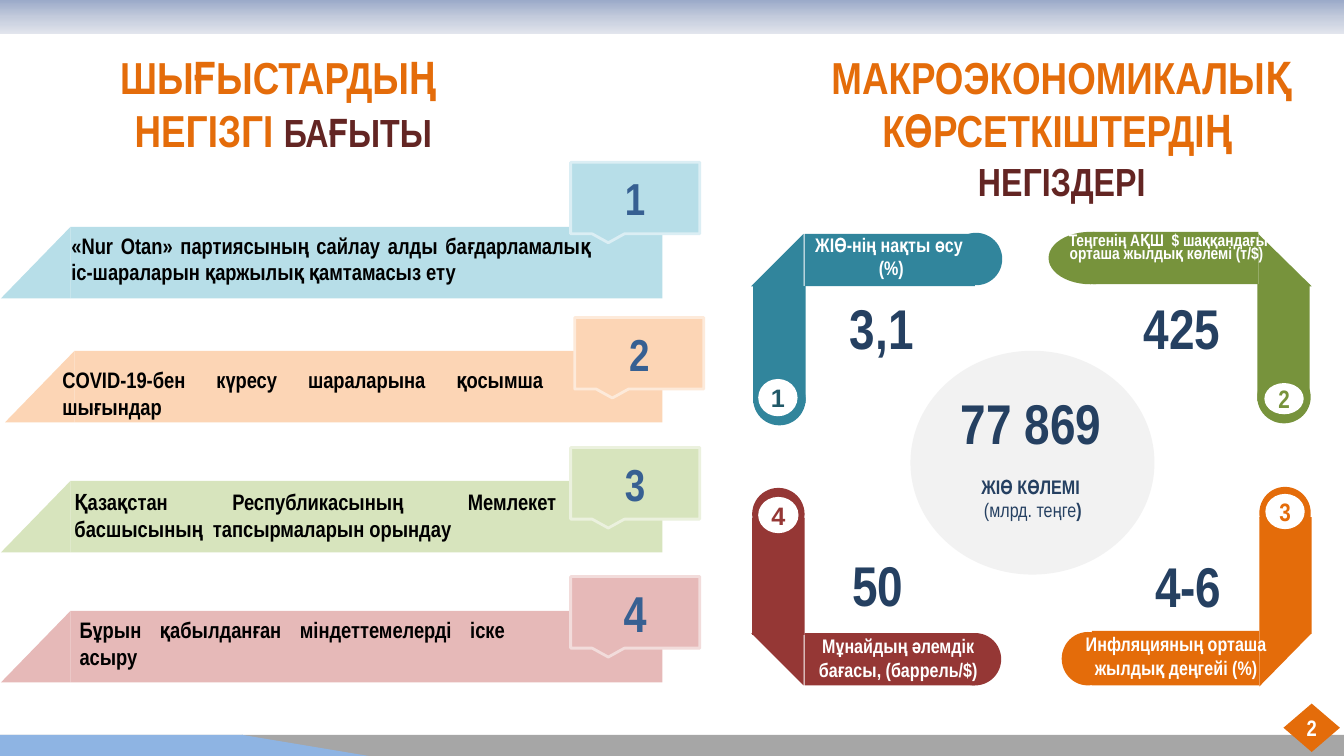
from copy import deepcopy
from dataclasses import dataclass
from pptx import Presentation
from pptx.dml.color import RGBColor
from pptx.enum.shapes import MSO_SHAPE as Kind
from pptx.enum.text import MSO_ANCHOR as Anchor, MSO_AUTO_SIZE as Fit, PP_ALIGN as Align
from pptx.oxml.ns import qn
from pptx.util import Pt


@dataclass(frozen=True)
class Theme:
    font: str = "Arial Narrow"
    plain: str = "Arial"
    orange: str = "E46C0A"
    maroon: str = "632523"
    navy: str = "254061"
    blue: str = "376092"
    sky: str = "8EB4E3"
    gray: str = "A6A6A6"
    pale: str = "F2F2F2"
    white: str = "FFFFFF"
    black: str = "000000"
    head: int = 32
    sub: int = 28
    value: int = 40
    body: int = 16
    label: int = 14
    small: int = 12
    badge: int = 18


T = Theme()
PX = 9144  # 100 px to the inch

# Content: lengths in px
BAND = [(0, "9BAAC9"), (0.5, "C3CBDC"), (1, "E2E5ED")]
LEFT = ["ШЫҒЫСТАРДЫҢ ", [("НЕГІЗГІ ", T.head, T.orange), ("БАҒЫТЫ", T.sub, T.maroon)]]
RIGHT = [[("МАКРОЭКОНОМИКАЛЫҚ КӨРСЕТКІШТЕРДІҢ", T.head, T.orange), (" ", T.sub, T.maroon)],
         [("НЕГІЗДЕРІ", T.sub, T.maroon)]]

# left, top, rise of tag, fill, edge, digit size, text box, text
ROWS = [
    (1, 225, 64, "B7DEE8", "DBEEF4", 32, (61, 225, 535, 64),
     "«Nur Otan» партиясының сайлау алды бағдарламалық іс-шараларын қаржылық қамтамасыз ету"),
    (5, 348, 33, "FCD5B5", "FDEADA", 32, (52, 358, 497, 64),
     "COVID-19-бен күресу шараларына қосымша шығындар"),
    (1, 477, 33, "D7E4BD", "EBF1DE", 32, (64, 479, 498, 64),
     "Қазақстан Республикасының Мемлекет басшысының  тапсырмаларын орындау"),
    (1, 606, 34, "E6B9B8", "F2DCDB", 36, (69, 606, 442, 64),
     "Бұрын қабылданған міндеттемелерді іске асыру"),
]

# fill, post, post end, arm, arm end, corner, flip, turn
HOOKS = [
    ("31859C", (747, 284, 52, 116), (747, 370, 52, 52), (798, 232, 169, 52),
     (942, 231, 52, 52), (745, 232, 52, 52), True, 0),
    ("77933C", (1247, 282, 52, 116), (1247, 368, 53, 52), (1084, 230, 164, 52),
     (1040, 230, 83, 52), (1248, 232, 53, 52), False, 0),
    ("953735", (746, 514, 52, 116), (746, 484, 52, 52), (798, 628, 169, 52),
     (941, 628, 52, 52), (745, 628, 52, 52), False, 180),
    (T.orange, (1249, 513, 52, 116), (1249, 483, 51, 52), (1083, 626, 166, 54),
     (1053, 627, 52, 53), (1249, 629, 51, 52), True, 180),
]
BADGES = [
    ("1", (752, 376, 39, 37), "215968", T.plain),
    ("2", (1254, 380, 39, 31), "77933C", T.font),
    ("3", (1255, 490, 39, 35), T.orange, T.font),
    ("4", (752, 493, 40, 36), "953735", T.plain),
]
VALUES = [("77 869", 936, 381), ("3,1", 788, 286), ("425", 1086, 286),
          ("4-6", 1092, 542), ("50", 784, 541)]
LABELS = [
    (["ЖІӨ-нің нақты өсу ", "(%)"], (763, 226, 242, 57)),
    (["Инфляцияның орташа жылдық деңгейі (%)"], (1062, 622, 209, 57)),
    (["Мұнайдың әлемдік бағасы, (баррель/$)"], (798, 624, 186, 57)),
]
RATE = "Теңгенің АҚШ  $ шаққандағы орташа жылдық көлемі (т/$) "

deck = Presentation()
deck.slide_width, deck.slide_height = 1333 * PX, 750 * PX
slide = deck.slides.add_slide(deck.slide_layouts[5])
shapes = slide.shapes


def emu(box):
    return [n * PX for n in box]


def style(font, size, color, bold=True, face=T.font):
    font.name, font.size, font.bold = face, Pt(size), bold
    font.color.rgb = RGBColor.from_string(color)


def write(frame, paras, size, color, align=Align.CENTER, face=T.font):
    """A paragraph is a string, or a list of runs: text, size, colour, bold."""
    for i, para in enumerate(paras):
        line = frame.paragraphs[0] if i == 0 else frame.add_paragraph()
        line.alignment = align
        style(line.font, size, color, face=face)
        if isinstance(para, str):
            line.add_run().text = para
            continue
        for text, *look in para:
            run = line.add_run()
            run.text = text
            style(run.font, *look)


def draw(kind, box, fill, edge=None, flip=False, turn=0):
    item = shapes.add_shape(kind, *emu(box))
    item.shadow.inherit = False
    item.fill.solid()
    item.fill.fore_color.rgb = RGBColor.from_string(fill)
    if edge:
        item.line.color.rgb = RGBColor.from_string(edge)
        item.line.width = Pt(2)
    else:
        item.line.fill.background()
    if flip:
        item.element.spPr.get_or_add_xfrm().set("flipH", "1")
    item.rotation = turn
    return item


def mark(item, text, size, color, face=T.font):
    frame = item.text_frame
    frame.vertical_anchor = Anchor.MIDDLE
    frame.margin_left = frame.margin_right = 0
    frame.margin_top = frame.margin_bottom = 0
    write(frame, [text], size, color, face=face)


def note(box, paras, size, color, align=Align.CENTER):
    frame = shapes.add_textbox(*emu(box)).text_frame
    frame.word_wrap = True
    write(frame, paras, size, color, align)


# Bands at top and foot
draw(Kind.RECTANGLE, (0, 729, 1333, 21), T.gray)
band = draw(Kind.RECTANGLE, (-2, 0, 1336, 34), T.white)
band.fill.gradient()
band.fill.gradient_angle = 270
stops = band.element.find(".//" + qn("a:gsLst"))
stops.insert(1, deepcopy(stops[0]))
for stop, (place, color) in zip(band.fill.gradient_stops, BAND):
    stop.position = place
    stop.color.rgb = RGBColor.from_string(color)
draw(Kind.RECTANGLE, (0, 729, 241, 21), T.sky)
draw(Kind.RIGHT_TRIANGLE, (240, 729, 126, 21), T.sky)

# Headings
title = shapes.title
title.left, title.top, title.width, title.height = emu((5, 44, 552, 118))
title.text_frame.auto_size = Fit.NONE
title.text_frame.word_wrap = True
title.text_frame.vertical_anchor = Anchor.TOP
write(title.text_frame, LEFT, T.head, T.orange)
note((777, 44, 552, 212), RIGHT, T.head, T.orange)

# Numbered rows
for n, (x, y, rise, fill, edge, size, box, text) in enumerate(ROWS, 1):
    draw(Kind.RECTANGLE, (x + 69, y, 588 - x, 71), fill)
    draw(Kind.RIGHT_TRIANGLE, (x, y, 69, 71), fill, flip=True)
    tag = draw(Kind.RECTANGULAR_CALLOUT, (x + 565, y - rise, 128, 71), fill, edge)
    mark(tag, str(n), size, T.blue)
    note(box, [text], T.body, T.black, Align.JUSTIFY)

# Hooks around the centre
for fill, post, foot, arm, tip, bend, flip, turn in HOOKS:
    for box in (post, arm):
        draw(Kind.RECTANGLE, box, fill)
    for box in (foot, tip):
        draw(Kind.OVAL, box, fill)
    draw(Kind.RIGHT_TRIANGLE, bend, fill, flip=flip, turn=turn)
draw(Kind.OVAL, (903, 348, 242, 222), T.pale)
for text, box, color, face in BADGES:
    mark(draw(Kind.OVAL, box, T.white), text, T.badge, color, face)

# Values and labels
for text, x, y in VALUES:
    note((x, y, 173, 77), [text], T.value, T.navy)
for paras, box in LABELS:
    note(box, paras, T.label, T.white)
note((913, 466, 223, 57),
     ["ЖІӨ КӨЛЕМІ ", [("(млрд. теңге", T.label, T.navy, False), (")", T.label, T.navy)]],
     T.label, T.navy)

# Exchange rate table, without style or grid
grid = shapes.add_table(1, 1, *emu((1038, 230, 242, 41)))
grid.table.first_row = grid.table.horz_banding = False
look = grid.element.find(".//" + qn("a:tableStyleId"))
look.text = "{2D5ABB26-0587-4C30-8999-92F81FD0307C}"
cell = grid.table.cell(0, 0)
cell.fill.background()
write(cell.text_frame, [RATE], T.small, T.white)
cell.text_frame.paragraphs[0].line_spacing = 0.8

# Page number
page = draw(Kind.FLOWCHART_DECISION, (1273, 698, 56, 48), T.orange)
mark(page, "2", T.body, T.white)

deck.save("out.pptx")
